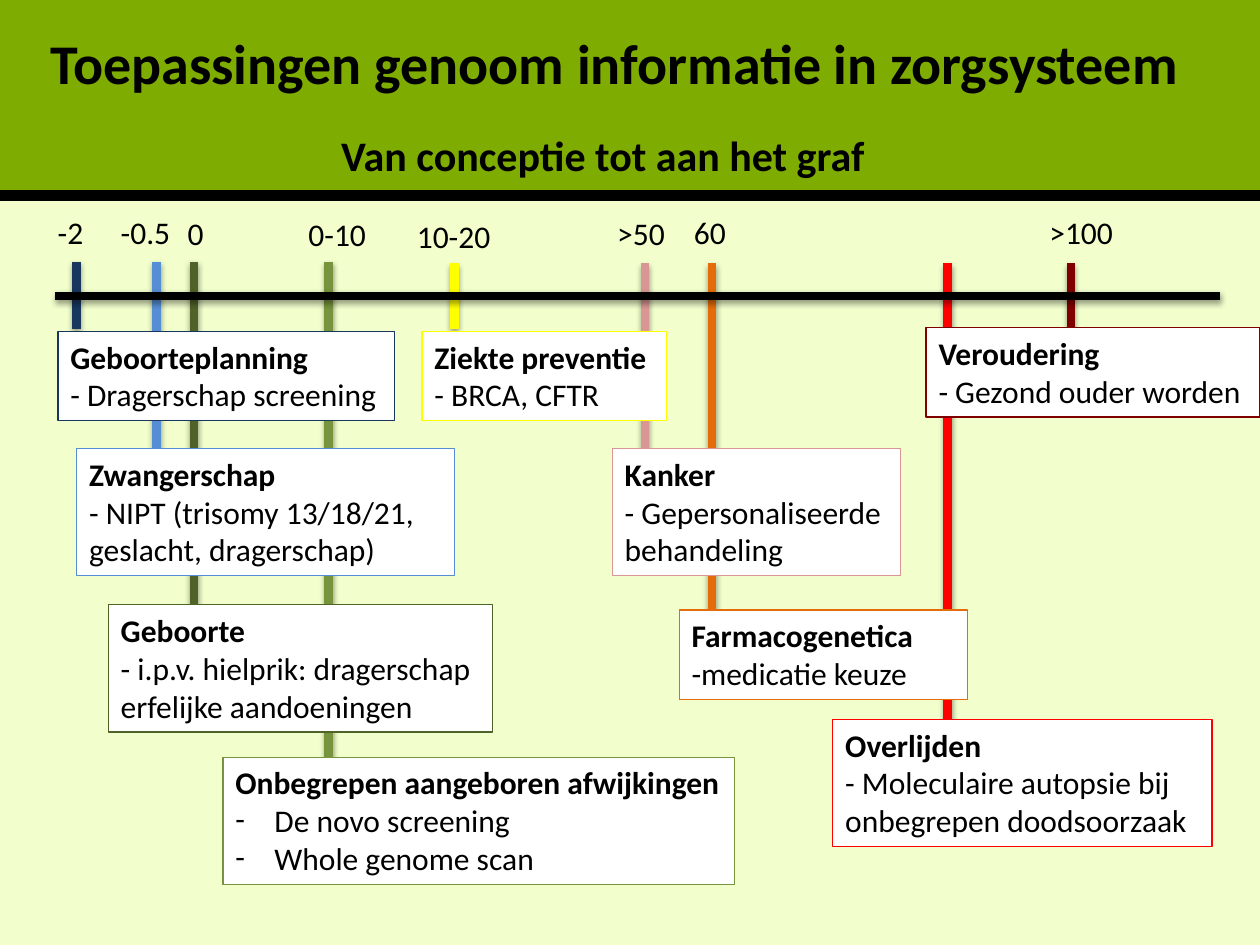
from lxml import etree
from pptx import Presentation
from pptx.dml.color import RGBColor
from pptx.enum.shapes import MSO_CONNECTOR, MSO_SHAPE
from pptx.enum.text import MSO_ANCHOR, MSO_AUTO_SIZE, PP_ALIGN
from pptx.oxml import parse_xml
from pptx.oxml.ns import qn
from pptx.util import Emu, Pt

LINE, RECT = MSO_CONNECTOR.STRAIGHT, MSO_SHAPE.RECTANGLE
TOP, LEFT, GROW = MSO_ANCHOR.TOP, PP_ALIGN.LEFT, MSO_AUTO_SIZE.SHAPE_TO_FIT_TEXT
PX = 9144
WIDE, HIGH = 1000, 750
INDENT = 31

COLORS = {
    "black": "000000", "white": "FFFFFF", "band": "7FAC00", "pale": "F2FFCD",
    "navy": "17375E", "blue": "558ED5", "moss": "4F6228", "green": "77933C",
    "yellow": "FFFF00", "pink": "D99694", "orange": "E46C0A", "red": "FF0000",
    "wine": "800000",
}
FRAME = {"auto_size": GROW, "vertical_anchor": TOP}
INSET = {"margin_left": 10, "margin_right": 10, "margin_top": 5, "margin_bottom": 5}
SHADOW = (
    '<a:effectLst xmlns:a="http://schemas.openxmlformats.org/drawingml/2006/main">'
    '<a:outerShdw blurRad="40000" dist="20000" dir="5400000" rotWithShape="0">'
    '<a:srgbClr val="000000"><a:alpha val="38000"/></a:srgbClr>'
    '</a:outerShdw></a:effectLst>'
)
TICKS = [
    (752, 209, 601, "red"), (565, 209, 484, "orange"), (512, 209, 356, "pink"),
    (261, 208, 602, "green"), (154, 208, 479, "moss"), (124, 208, 356, "blue"),
    (61, 208, 261, "navy"), (361, 209, 261, "yellow"), (850, 209, 260, "wine"),
]
AGES = [
    ((36, 164, 41, 40), "-2"), ((86, 164, 60, 40), "-0.5"),
    ((139, 165, 33, 40), "0"), ((235, 166, 66, 40), "0-10"),
    ((321, 167, 79, 40), "10-20"), ((480, 165, 58, 40), ">50"),
    ((541, 164, 46, 40), "60"), ((823, 164, 71, 40), ">100"),
]
CARDS = [
    ((46, 263, 267, 71), "navy", "Geboorteplanning", ["- Dragerschap screening"]),
    ((61, 356, 300, 101), "blue", "Zwangerschap",
     ["- NIPT (trisomy 13/18/21, geslacht, dragerschap)"]),
    ((86, 480, 305, 101), "moss", "Geboorte",
     ["- i.p.v. hielprik: dragerschap erfelijke aandoeningen"]),
    ((177, 601, 406, 101), "green", "Onbegrepen aangeboren afwijkingen",
     ["De novo screening", "Whole genome scan"]),
    ((335, 263, 194, 71), "yellow", "Ziekte preventie", ["- BRCA, CFTR"]),
    ((486, 356, 229, 101), "pink", "Kanker", ["- Gepersonaliseerde behandeling"]),
    ((539, 484, 229, 71), "orange", "Farmacogenetica", ["-medicatie keuze"]),
    ((735, 260, 265, 71), "wine", "Veroudering", ["- Gezond ouder worden"]),
    ((661, 571, 301, 101), "red", "Overlijden",
     ["- Moleculaire autopsie bij onbegrepen doodsoorzaak"]),
]


def rgb(name):
    """Return the named colour."""
    return RGBColor.from_string(COLORS[name])


def scale(box):
    """Turn px lengths into EMU."""
    return [Emu(n * PX) for n in box]


def style(item, values):
    """Set each attribute of item from a dict."""
    for key, value in values.items():
        setattr(item, key, value)


def write(shape, lines, size=18, wrap=True):
    """Fill a shape with (text, bold) lines."""
    frame = shape.text_frame
    style(frame, {**FRAME, "word_wrap": wrap})
    style(frame, {key: Emu(n * PX) for key, n in INSET.items()})
    frame.text = "\n".join(text for text, bold in lines)
    for para, (text, bold) in zip(frame.paragraphs, lines):
        para.alignment = LEFT
        style(para.runs[0].font, {"name": "Calibri", "size": Pt(size), "bold": bold})
        para.runs[0].font.color.rgb = rgb("black")


def dash(para):
    """Give a paragraph a hanging dash bullet."""
    props = para._p.get_or_add_pPr()
    props.set("marL", str(INDENT * PX))
    props.set("indent", str(-INDENT * PX))
    etree.SubElement(props, qn("a:buFont")).set("typeface", "Calibri")
    etree.SubElement(props, qn("a:buChar")).set("char", "-")


def block(slide, box, color):
    """Draw a plain filled rectangle."""
    shape = slide.shapes.add_shape(RECT, *scale(box))
    shape.shadow.inherit = False
    shape.fill.solid()
    shape.fill.fore_color.rgb = rgb(color)
    shape.line.fill.background()


def rule(slide, ends, color, width=5, effect=SHADOW):
    """Draw a straight line between two points."""
    line = slide.shapes.add_connector(LINE, *scale(ends))
    line.line.color.rgb = rgb(color)
    line.line.width = Pt(width)
    line._element.spPr.append(parse_xml(effect))


def label(slide, box, text, size=18, bold=False):
    """Place one line of text."""
    write(slide.shapes.add_textbox(*scale(box)), [(text, bold)], size, False)


def header(slide, box):
    """Draw the title band with title and subtitle."""
    left, top, wide, high = box
    block(slide, box, "band")
    rule(slide, (left, top + high, left + wide, top + high), "black", 6,
         '<a:effectLst xmlns:a="http://schemas.openxmlformats.org/drawingml/2006/main"/>')
    title = slide.shapes.title
    slide.shapes._spTree.append(title._element)
    spot = scale((left + 30, top + 18, 943, 64))
    style(title, dict(zip(("left", "top", "width", "height"), spot)))
    write(title, [("Toepassingen genoom informatie in zorgsysteem", True)], 32)
    label(slide, (left + 261, top + 98, 444, 50), "Van conceptie tot aan het graf", 24, True)


def card(slide, box, color, head, items):
    """Draw a framed box with a bold head and its items."""
    shape = slide.shapes.add_textbox(*scale(box))
    shape.fill.solid()
    shape.fill.fore_color.rgb = rgb("white")
    shape.line.color.rgb = rgb(color)
    shape.line.width = Pt(0.75)
    write(shape, [(head, True)] + [(item, False) for item in items])
    if len(items) > 1:
        for para in shape.text_frame.paragraphs[1:]:
            dash(para)


def timeline(slide, box):
    """Draw the life line with its ticks, ages and cards."""
    left, top, wide, high = box

    def shift(area):
        return (left + area[0], top + area[1] - 170, *area[2:])

    block(slide, box, "pale")
    for x, start, end, color in TICKS:
        rule(slide, (left + x, top + start - 170, left + x, top + end - 170), color)
    for area, text in AGES:
        label(slide, shift(area), text)
    for area, color, head, items in CARDS:
        card(slide, shift(area), color, head, items)
    rule(slide, (left + 44, top + 65, left + 968, top + 65), "black")


def main():
    """Build and save the slide."""
    deck = Presentation()
    deck.slide_width, deck.slide_height = scale((WIDE, HIGH))
    slide = deck.slides.add_slide(deck.slide_layouts[5])
    slide.background.fill.solid()
    slide.background.fill.fore_color.rgb = rgb("pale")
    header(slide, (0, 0, WIDE, 155))
    timeline(slide, (0, 170, WIDE, HIGH - 170))
    deck.save("out.pptx")


if __name__ == "__main__":
    main()
